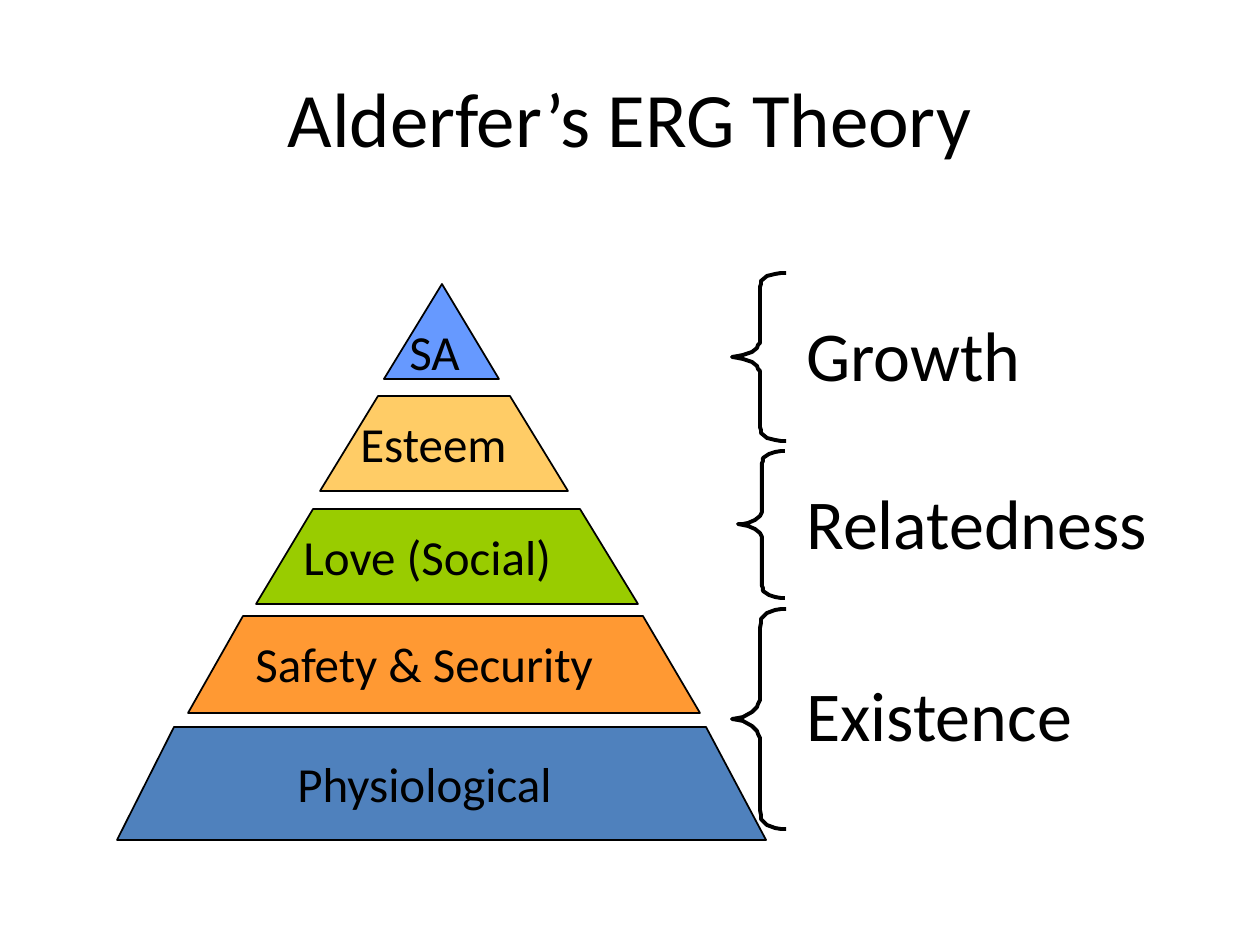
from pptx import Presentation
from pptx import util as u
from pptx.dml.color import RGBColor
from pptx.enum import text

PX = 914400 / 126
FONT = "Calibri"
BLACK = RGBColor(0, 0, 0)
BLUE = RGBColor(0x4F, 0x81, 0xBD)
ORANGE = RGBColor(0xFF, 0x99, 0x33)
GREEN = RGBColor(0x99, 0xCC, 0x00)
YELLOW = RGBColor(0xFF, 0xCC, 0x66)
SKY = RGBColor(0x66, 0x99, 0xFF)

TITLE = "Alderfer’s ERG Theory"
# label, fill, top edge (left, right, y), bottom edge (left, right, y), label box (left, top, width)
LEVELS = [
    ("Physiological", BLUE, (174, 706, 727), (117, 766, 840), (285, 747, 311)),
    ("Safety & Security", ORANGE, (243, 643, 616), (188, 700, 713), (243, 627, 401)),
    ("Love (Social)", GREEN, (313, 580, 509), (256, 638, 604), (291, 520, 311)),
    ("Esteem", YELLOW, (378, 510, 396), (320, 568, 491), (348, 407, 192)),
    ("SA", SKY, (442, 442, 284), (384, 499, 379), (397, 315, 91)),
]
# label, label box (top, width), brace (left, top, width, height)
NEEDS = [
    ("Growth", (305, 251), (732, 273, 54, 168)),
    ("Relatedness", (473, 415), (738, 451, 47, 147)),
    ("Existence", (665, 329), (732, 609, 54, 220)),
]
NEED_LEFT = 794
# Upper half of a brace, as shares of its width and half height
BRACE_HALF = [
    (1, 0), (0.91, 0), (0.79, 0.01), (0.65, 0.04), (0.54, 0.09), (0.53, 0.13), (0.51, 0.17),
    (0.51, 0.83), (0.49, 0.86), (0.46, 0.89), (0.37, 0.94), (0.21, 0.98), (0.11, 0.99), (0, 1),
]


def px(length):
    return u.Emu(round(length * PX))


def add_label(slide, words, box, size, align=text.PP_ALIGN.LEFT, anchor=text.MSO_ANCHOR.TOP):
    shape = slide.shapes.add_textbox(*map(px, box))
    frame = shape.text_frame
    frame.word_wrap = True
    frame.vertical_anchor = anchor
    paragraph = frame.paragraphs[0]
    paragraph.alignment = align
    run = paragraph.add_run()
    run.text = words
    run.font.name = FONT
    run.font.size = u.Pt(size)
    run.font.color.rgb = BLACK


def add_outline(slide, points, line_width, fill=None):
    """Draw a closed, filled outline, or an open line if no fill is given."""
    builder = slide.shapes.build_freeform(*points[0], scale=PX)
    builder.add_line_segments(points[1:], close=fill is not None)
    shape = builder.convert_to_shape()
    shape.shadow.inherit = False
    shape.line.color.rgb = BLACK
    shape.line.width = u.Pt(line_width)
    if fill is None:
        shape.fill.background()
    else:
        shape.fill.solid()
        shape.fill.fore_color.rgb = fill


def brace_points(left, top, width, height):
    lower_half = [(x, 2 - y) for x, y in reversed(BRACE_HALF[:-1])]
    return [(left + x * width, top + y * height / 2) for x, y in BRACE_HALF + lower_half]


def main():
    presentation = Presentation()
    presentation.slide_width = u.Inches(10)
    presentation.slide_height = u.Inches(7.5)
    slide = presentation.slides.add_slide(presentation.slide_layouts[6])

    add_label(slide, TITLE, (63, 38, 1134, 157), 44,
              text.PP_ALIGN.CENTER, text.MSO_ANCHOR.MIDDLE)

    for label, fill, (top_left, top_right, top), (left, right, bottom), box in LEVELS:
        corners = [(top_left, top), (top_right, top), (right, bottom), (left, bottom)]
        add_outline(slide, list(dict.fromkeys(corners)), 1, fill)
        add_label(slide, label, (*box, 71), 28)

    for label, (top, width), brace in NEEDS:
        add_label(slide, label, (NEED_LEFT, top, width, 96), 40)
        add_outline(slide, brace_points(*brace), 2.25)

    presentation.save("out.pptx")


if __name__ == "__main__":
    main()
